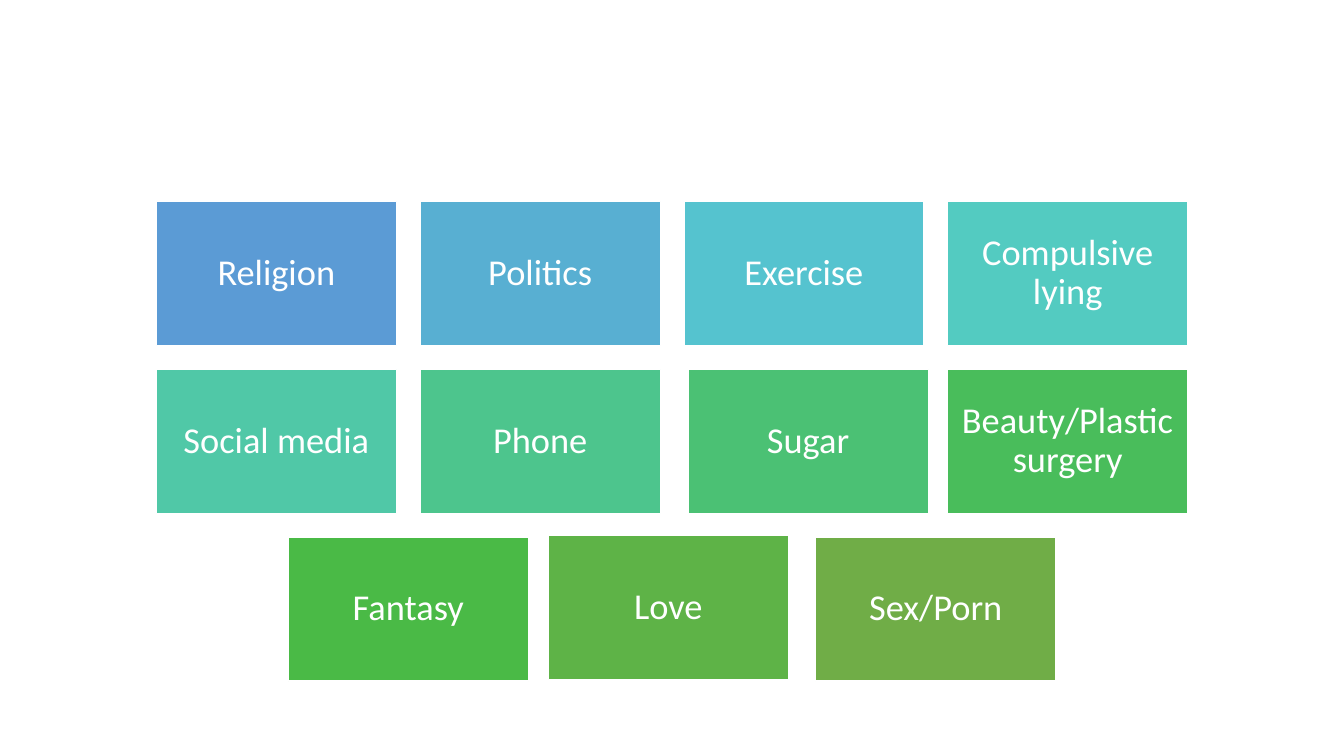
import pptx
import pptx.util
import pptx.dml.color
import pptx.enum.shapes
import pptx.enum.text

Pt = pptx.util.Pt

TILE_WIDTH, TILE_HEIGHT = 171.6, 102.8
COLUMN_PITCH, ROW_PITCH = 188.4, 119.9
GRID_LEFT, GRID_TOP = 111.7, 143.9
COLUMNS = 4

ADDICTION_ROWS = [
    [("Religion", "5B9BD5"), ("Politics", "58AFD2"),
     ("Exercise", "55C3CF"), ("Compulsive lying", "53CBC1")],
    [("Social media", "50C8A7"), ("Phone", "4DC58D"),
     ("Sugar", "4BC174"), ("Beauty/Plastic surgery", "49BD5B")],
    [("Fantasy", "4ABA46"), ("Love", "5EB347"), ("Sex/Porn", "70AD47")],
]
NUDGES = {"Sugar": (3, 0), "Love": (-2.7, -1.2)}


def set_color(color_format, value):
    color_format.rgb = pptx.dml.color.RGBColor.from_string(value)


def write_text(shape, text, size=26, font="Calibri", color="FFFFFF", inset=7.8):
    frame = shape.text_frame
    frame.word_wrap = True
    frame.vertical_anchor = pptx.enum.text.MSO_ANCHOR.MIDDLE
    frame.margin_left = frame.margin_right = Pt(inset)
    frame.margin_top = frame.margin_bottom = Pt(inset)
    paragraph = frame.paragraphs[0]
    paragraph.alignment = pptx.enum.text.PP_ALIGN.CENTER
    paragraph.line_spacing = 0.9
    paragraph.space_after = Pt(9.1)
    run = paragraph.add_run()
    run.text = text
    run.font.size = Pt(size)
    run.font.name = font
    set_color(run.font.color, color)


def add_tile(slide, text, fill, left, top):
    shape = slide.shapes.add_shape(
        pptx.enum.shapes.MSO_SHAPE.RECTANGLE,
        Pt(left), Pt(top), Pt(TILE_WIDTH), Pt(TILE_HEIGHT))
    shape.shadow.inherit = False
    shape.fill.solid()
    set_color(shape.fill.fore_color, fill)
    set_color(shape.line.color, "FFFFFF")
    shape.line.width = Pt(1)
    write_text(shape, text)


def main():
    presentation = pptx.Presentation()
    presentation.slide_width = Pt(960)
    presentation.slide_height = Pt(540)
    slide = presentation.slides.add_slide(presentation.slide_layouts[6])
    for row_index, row in enumerate(ADDICTION_ROWS):
        row_left = GRID_LEFT + (COLUMNS - len(row)) * COLUMN_PITCH / 2
        row_top = GRID_TOP + row_index * ROW_PITCH
        for column_index, (text, fill) in enumerate(row):
            shift_x, shift_y = NUDGES.get(text, (0, 0))
            add_tile(slide, text, fill,
                     row_left + column_index * COLUMN_PITCH + shift_x,
                     row_top + shift_y)
    presentation.save("out.pptx")


if __name__ == "__main__":
    main()
